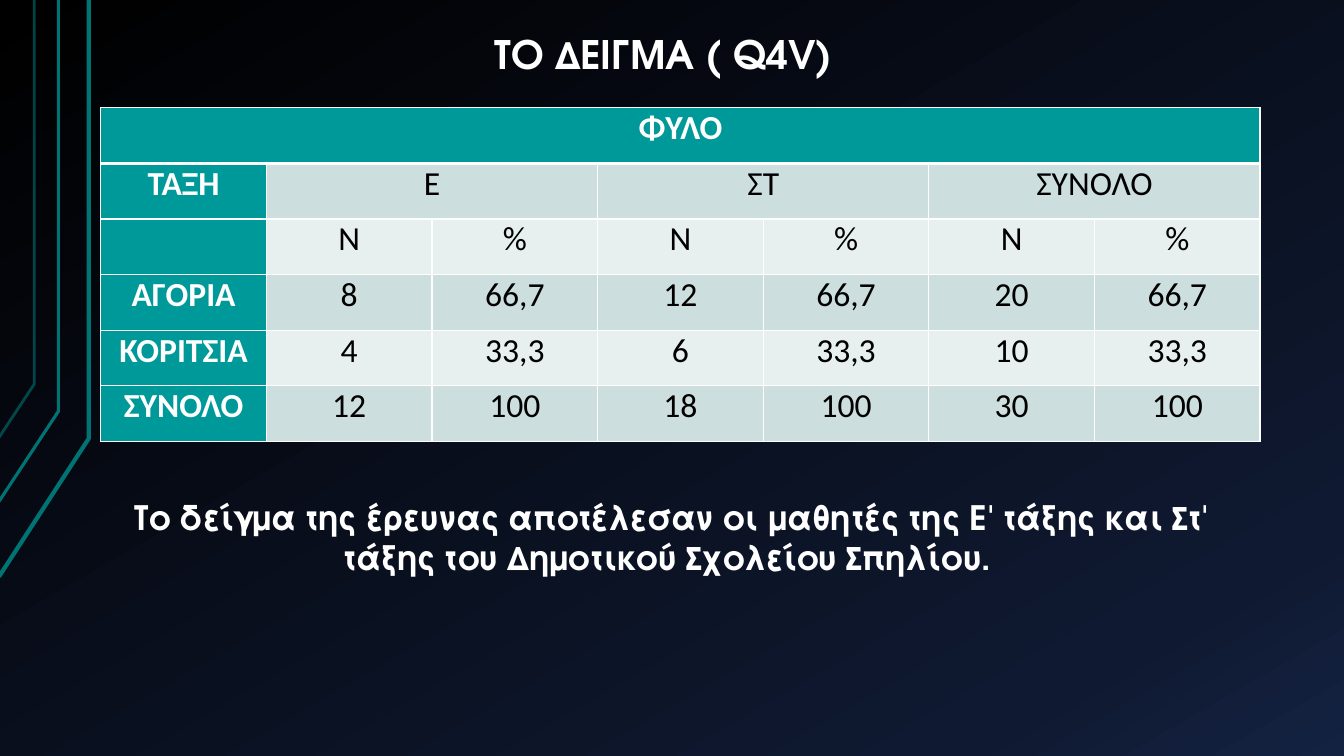
from copy import deepcopy

from lxml import etree
from pptx import Presentation
from pptx.dml.color import RGBColor
from pptx.enum.text import MSO_ANCHOR, MSO_AUTO_SIZE, PP_ALIGN
from pptx.oxml.ns import qn
from pptx.util import Inches, Pt

LEFT, CENTER = PP_ALIGN.LEFT, PP_ALIGN.CENTER
TOP = MSO_ANCHOR.TOP
GROW = MSO_AUTO_SIZE.SHAPE_TO_FIT_TEXT
TITLE_ONLY = 5


def rgb(value):
    return RGBColor.from_string(value)


class Deck:
    display, body = "TeX Gyre Adventor", "Calibri"
    white, black, teal, line = "FFFFFF", "000000", "009999", "007373"
    bands = ("E7EFEF", "CCDEDE")

    def __init__(self, prs):
        self.s = prs.slides.add_slide(prs.slide_layouts[TITLE_ONLY])

    def background(self, stops, angle):
        fill = self.s.background.fill
        fill.gradient()
        fill.gradient_angle = angle
        gs_list = next(self.s.element.iter(qn("a:gsLst")))
        while len(gs_list) < len(stops):
            gs_list.append(deepcopy(gs_list[-1]))
        for stop, (position, color) in zip(fill.gradient_stops, stops):
            stop.position = position
            stop.color.rgb = rgb(color)

    def polyline(self, points, width, alpha=100):
        pts = [(Inches(x), Inches(y)) for x, y in points]
        builder = self.s.shapes.build_freeform(*pts[0])
        builder.add_line_segments(pts[1:], close=False)
        sp = builder.convert_to_shape()
        sp.shadow.inherit = False
        sp.fill.background()
        sp.line.color.rgb = rgb(self.line)
        sp.line.width = Pt(width)
        if alpha < 100:
            color = next(sp.element.iter(qn("a:srgbClr")))
            etree.SubElement(color, qn("a:alpha"), val=str(alpha * 1000))

    def format(self, p, size, color, font, bold=True, align=CENTER):
        p.alignment = align
        for r in p.runs:
            r.font.size, r.font.name, r.font.bold = Pt(size), font, bold
            r.font.color.rgb = rgb(color)

    def place(self, sp, text, box, size, align):
        sp.left, sp.top, sp.width, sp.height = [Inches(v) for v in box]
        tf = sp.text_frame
        tf.text = text
        tf.word_wrap = True
        tf.auto_size = GROW
        tf.vertical_anchor = TOP
        self.format(tf.paragraphs[0], size, self.white, self.display, align=align)

    def title(self, text, box, size):
        self.place(self.s.shapes.title, text, box, size, LEFT)

    def text(self, text, box, size):
        lengths = [Inches(v) for v in box]
        self.place(self.s.shapes.add_textbox(*lengths), text, box, size, CENTER)

    def borders(self, cell, widths):
        tc_pr = cell._tc.get_or_add_tcPr()
        for side, width in widths.items():
            ln = etree.SubElement(tc_pr, qn("a:ln" + side), w=str(Pt(width)))
            fill = etree.SubElement(ln, qn("a:solidFill"))
            etree.SubElement(fill, qn("a:srgbClr"), val=self.white)

    def table(self, rows, merges, box, size):
        lengths = [Inches(v) for v in box]
        tbl = self.s.shapes.add_table(len(rows), len(rows[0]), *lengths).table
        for i, row in enumerate(rows):
            for j, value in enumerate(row):
                cell = tbl.cell(i, j)
                header = i == 0 or j == 0
                cell.text = value
                cell.margin_left = cell.margin_right = Inches(0.07)
                cell.margin_top = cell.margin_bottom = 0
                self.borders(cell, {"L": 1, "R": 1, "T": 3 if i == 1 else 1,
                                    "B": 3 if i == 0 else 1})
                cell.fill.solid()
                cell.fill.fore_color.rgb = rgb(self.teal if header else self.bands[i % 2])
                self.format(cell.text_frame.paragraphs[0], size,
                            self.white if header else self.black, self.body, header)
        for row, first, last in merges:
            tbl.cell(row, first).merge(tbl.cell(row, last))


def main():
    prs = Presentation()
    prs.slide_width, prs.slide_height = Inches(13.33), Inches(7.5)
    deck = Deck(prs)
    deck.background([(0, "000000"), (0.85, "0F1931"), (1, "142242")], 300)

    deck.polyline([(-0.01, 5.72), (0.88, 4.35), (0.88, 0)], 3)
    deck.polyline([(-0.02, 4.99), (0.58, 4.08), (0.58, 0)], 2.25)
    deck.polyline([(-0.01, 4.34), (0.34, 3.81), (0.34, 0)], 2, alpha=60)

    deck.title(" ΤΟ ΔΕΙΓΜΑ ( Q4V)", (4.7, 0.25, 3.94, 0.57), 28)
    rows = [
        ["ΦΥΛΟ"] + [""] * 6,
        ["ΤΑΞΗ", "Ε", "", "ΣΤ", "", "ΣΥΝΟΛΟ", ""],
        [""] + ["Ν", "%"] * 3,
        ["ΑΓΟΡΙΑ", "8", "66,7", "12", "66,7", "20", "66,7"],
        ["ΚΟΡΙΤΣΙΑ", "4", "33,3", "6", "33,3", "10", "33,3"],
        ["ΣΥΝΟΛΟ", "12", "100", "18", "100", "30", "100"],
    ]
    merges = [(0, 0, 6)] + [(1, j, j + 1) for j in (1, 3, 5)]
    deck.table(rows, merges, (1, 1.07, 11.5, 3.31), 24)
    deck.text("Το δείγμα της έρευνας αποτέλεσαν οι μαθητές της Ε' τάξης και Στ' "
              "τάξης του Δημοτικού Σχολείου Σπηλίου. ", (1.23, 4.88, 10.87, 0.91), 24)
    prs.save("out.pptx")


if __name__ == "__main__":
    main()
